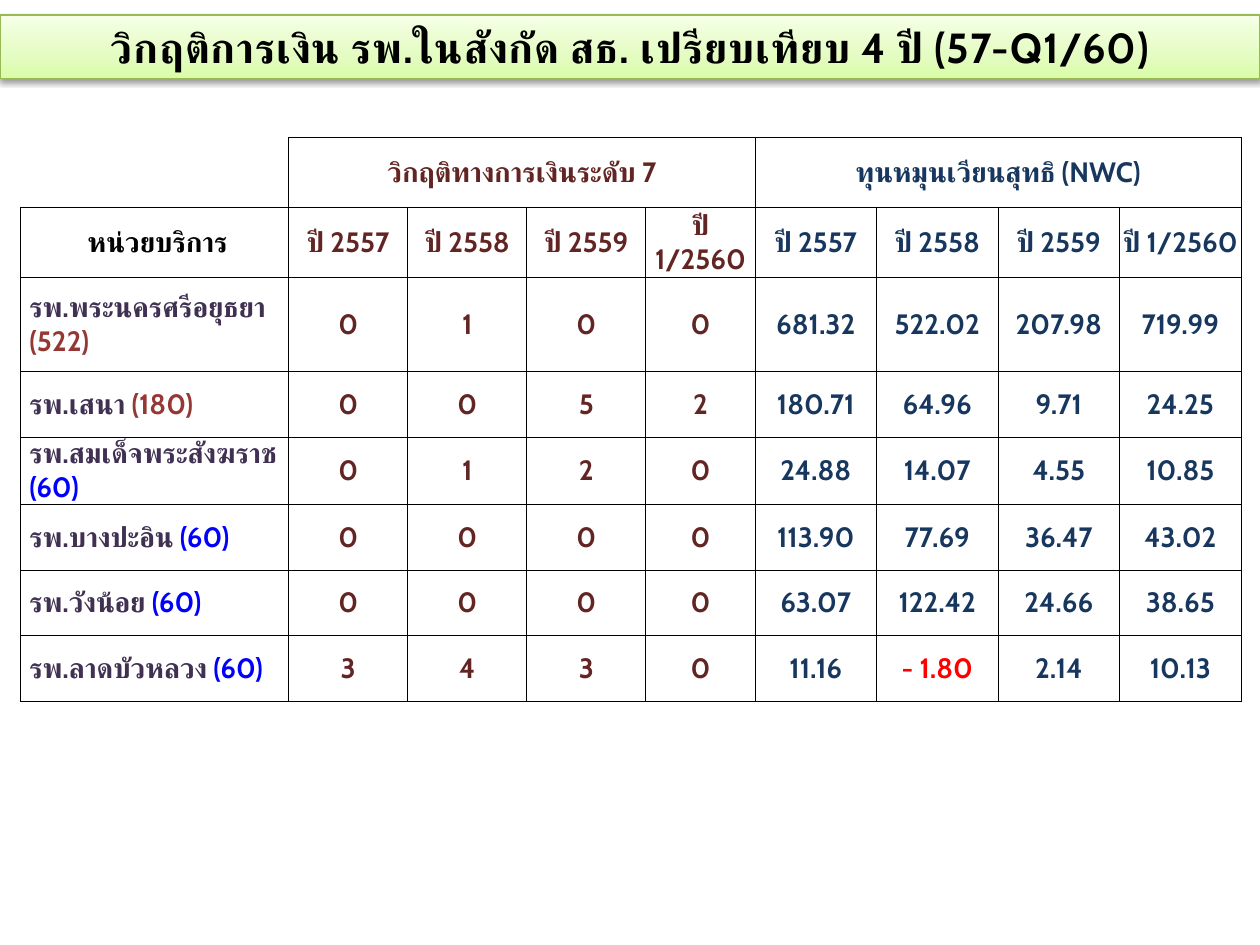
from lxml import etree
from pptx import Presentation
from pptx.dml.color import RGBColor
from pptx.enum import text
from pptx.oxml import parse_xml
from pptx.oxml.ns import nsdecls, qn
from pptx.util import Cm, Pt

FONT = "Cabin"
BLACK = RGBColor(0x00, 0x00, 0x00)
MAROON = RGBColor(0x63, 0x25, 0x23)
NAVY = RGBColor(0x17, 0x37, 0x5E)
PURPLE = RGBColor(0x40, 0x31, 0x52)
BRICK = RGBColor(0x95, 0x37, 0x35)
BLUE = RGBColor(0x00, 0x00, 0xFF)
RED = RGBColor(0xFF, 0x00, 0x00)
GREEN = RGBColor(0x98, 0xB9, 0x55)

YEARS = ["ปี 2557", "ปี 2558", "ปี 2559", "ปี 1/2560"]
HOSPITALS = [
    ("รพ.พระนครศรีอยุธยา ", "(522)", BRICK, "0 1 0 0", ["681.32", "522.02", "207.98", "719.99"]),
    ("รพ.เสนา ", "(180)", BRICK, "0 0 5 2", ["180.71", "64.96", "9.71", "24.25"]),
    ("รพ.สมเด็จพระสังฆราช ", "(60)", BLUE, "0 1 2 0", ["24.88", "14.07", "4.55", "10.85"]),
    ("รพ.บางปะอิน ", "(60)", BLUE, "0 0 0 0", ["113.90", "77.69", "36.47", "43.02"]),
    ("รพ.วังน้อย ", "(60)", BLUE, "0 0 0 0", ["63.07", "122.42", "24.66", "38.65"]),
    ("รพ.ลาดบัวหลวง ", "(60)", BLUE, "3 4 3 0", ["11.16", "- 1.80", "2.14", "10.13"]),
]


def add_text(paragraph, wording, color, size=16):
    run = paragraph.add_run()
    run.text = wording
    run.font.size = Pt(size)
    run.font.bold = True
    run.font.name = FONT
    run.font.color.rgb = color
    # Thai letters take the complex-script font
    etree.SubElement(run.font._element, qn("a:cs"), typeface=FONT)
    return run


def fill_cell(cell, parts, align=text.PP_ALIGN.CENTER, margins=(0.18, 0)):
    """Write (wording, colour) parts; margins are horizontal and vertical, in cm."""
    cell.margin_left = cell.margin_right = Cm(margins[0])
    cell.margin_top = cell.margin_bottom = Cm(margins[1])
    cell.vertical_anchor = text.MSO_ANCHOR.MIDDLE
    paragraph = cell.text_frame.paragraphs[0]
    paragraph.alignment = align
    for wording, color in parts:
        add_text(paragraph, wording, color)


prs = Presentation()
prs.slide_width, prs.slide_height = Cm(25.4), Cm(19.05)
slide = prs.slides.add_slide(prs.slide_layouts[5])

# Title band
title = slide.shapes.title
title.left, title.top, title.width, title.height = Cm(0), Cm(0.3), Cm(25.4), Cm(1.28)
title.line.color.rgb = GREEN
title.line.width = Pt(0.75)
line = title._element.spPr.find(qn("a:ln"))
line.addprevious(parse_xml(
    f'<a:gradFill {nsdecls("a")} rotWithShape="1"><a:gsLst>'
    '<a:gs pos="0"><a:srgbClr val="DAFDA7"/></a:gs>'
    '<a:gs pos="35000"><a:srgbClr val="E4FCC2"/></a:gs>'
    '<a:gs pos="100000"><a:srgbClr val="F5FFE7"/></a:gs>'
    '</a:gsLst><a:lin ang="16200000" scaled="1"/></a:gradFill>'))
line.addnext(parse_xml(
    f'<a:effectLst {nsdecls("a")}>'
    '<a:outerShdw blurRad="40000" dist="20000" dir="5400000" rotWithShape="0">'
    '<a:srgbClr val="000000"><a:alpha val="38000"/></a:srgbClr>'
    '</a:outerShdw></a:effectLst>'))
title.text_frame.auto_size = text.MSO_AUTO_SIZE.NONE
title.text_frame.vertical_anchor = text.MSO_ANCHOR.MIDDLE
heading = title.text_frame.paragraphs[0]
heading.alignment = text.PP_ALIGN.CENTER
heading_run = add_text(
    heading, "วิกฤติการเงิน รพ.ในสังกัด สธ. เปรียบเทียบ 4 ปี (57-Q1/60)", BLACK, 24)
heading_run.font._element.set("spc", "50")

# Table grid
widths = [5.41] + [2.4] * 3 + [2.2] + [2.45] * 4
heights = [1.41, 1.41, 1.9] + [1.32] * 5
table = slide.shapes.add_table(
    len(heights), len(widths), Cm(0.41), Cm(2.77), Cm(sum(widths)), Cm(sum(heights))).table
table.first_row = table.horz_banding = False
for column, width in zip(table.columns, widths):
    column.width = Cm(width)
for row, height in zip(table.rows, heights):
    row.height = Cm(height)

# Headings
tight = (0.03, 0.01)
groups = [(1, "วิกฤติทางการเงินระดับ 7", MAROON), (5, "ทุนหมุนเวียนสุทธิ (NWC)", NAVY)]
for first, group, color in groups:
    table.cell(0, first).merge(table.cell(0, first + 3))
    fill_cell(table.cell(0, first), [(group, color)], margins=tight)
    for offset, year in enumerate(YEARS):
        fill_cell(table.cell(1, first + offset), [(year, color)], margins=tight)
fill_cell(table.cell(1, 0), [("\u00a0หน่วยบริการ".replace("\u00a0", " "), BLACK)], margins=(0.25, 0.18))

# Hospitals
for r, (name, beds, beds_color, levels, capital) in enumerate(HOSPITALS, start=2):
    fill_cell(table.cell(r, 0), [(name, PURPLE), (beds, beds_color)], text.PP_ALIGN.LEFT)
    for c, level in enumerate(levels.split(), start=1):
        fill_cell(table.cell(r, c), [(level, MAROON)])
    for c, amount in enumerate(capital, start=5):
        fill_cell(table.cell(r, c), [(amount, RED if amount.startswith("-") else NAVY)])

# Borders: the empty corner keeps only its right and bottom edges
for r in range(len(heights)):
    for c in range(len(widths)):
        cell = table.cell(r, c)
        cell.fill.background()
        for position, edge in enumerate(["lnL", "lnR", "lnT", "lnB"]):
            bare = r == c == 0 and edge in ("lnL", "lnT")
            paint = "<a:noFill/>" if bare else f'<a:solidFill><a:srgbClr val="{BLACK}"/></a:solidFill>'
            cell._tc.get_or_add_tcPr().insert(position, parse_xml(
                f'<a:{edge} {nsdecls("a")} w="{Pt(0.5)}">{paint}</a:{edge}>'))

prs.save("out.pptx")
